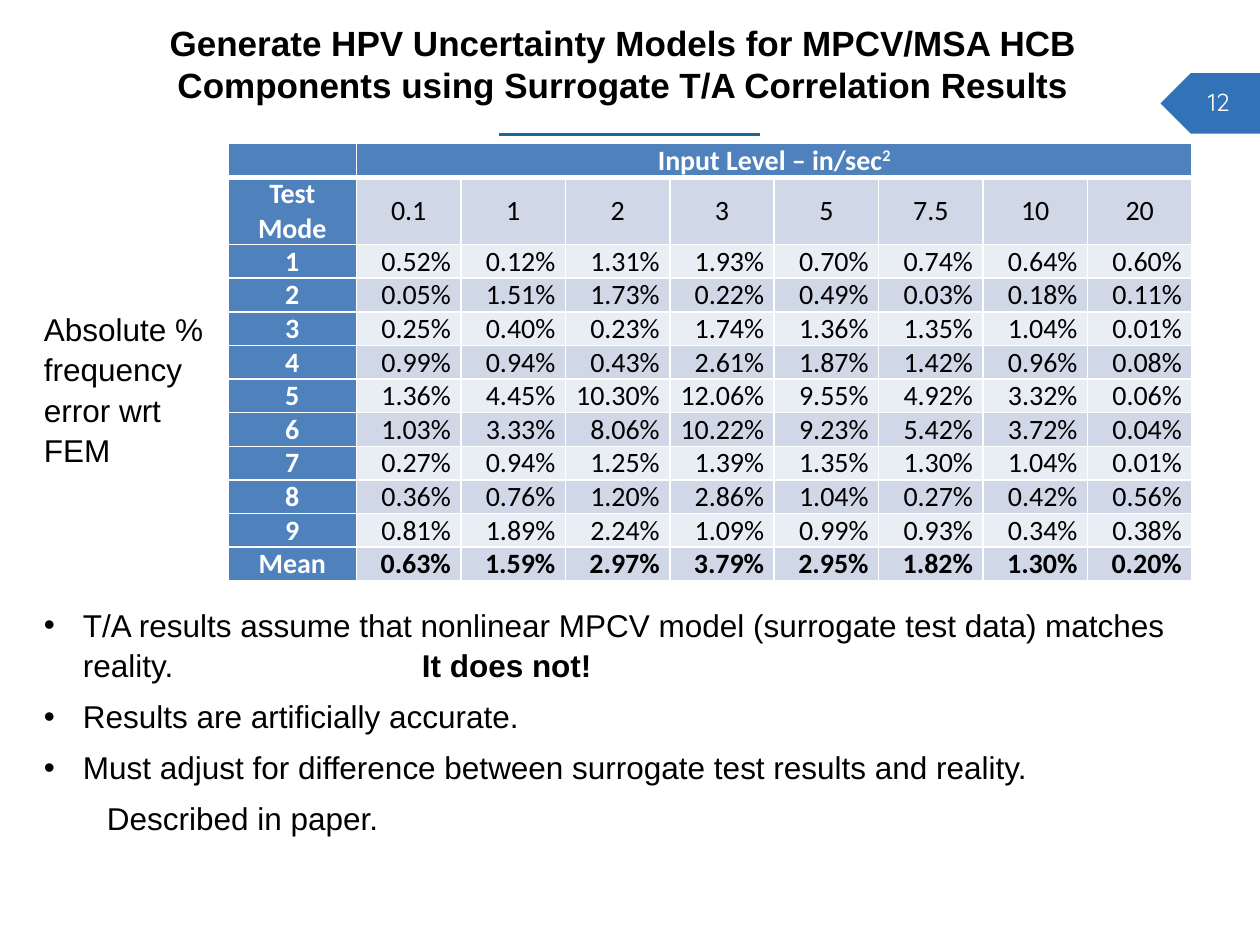
"""Build the slide on uncertainty models from surrogate correlation results."""
from lxml.etree import SubElement
from pptx import Presentation
from pptx.dml.color import RGBColor
from pptx.enum.shapes import MSO_CONNECTOR, MSO_SHAPE
from pptx.enum.text import MSO_ANCHOR, PP_ALIGN
from pptx.oxml.ns import qn
from pptx.util import Inches, Pt

BLACK = RGBColor(0x00, 0x00, 0x00)
WHITE = RGBColor(0xFF, 0xFF, 0xFF)
TAG_BLUE = RGBColor(0x31, 0x73, 0xB6)
RULE_BLUE = RGBColor(0x1A, 0x67, 0x98)
HEADER_BLUE = RGBColor(0x4F, 0x81, 0xBD)
BAND_DARK = RGBColor(0xD0, 0xD8, 0xE8)
BAND_LIGHT = RGBColor(0xE9, 0xED, 0xF4)

TITLE = ["Generate HPV Uncertainty Models for MPCV/MSA HCB",
         "Components using Surrogate T/A Correlation Results"]
PAGE_NUMBER = "12"
SIDE_LABEL = "Absolute % frequency error wrt FEM"
BULLETS = [
    ("T/A results assume that nonlinear MPCV model (surrogate test data) matches reality.\t",
     "It does not!"),
    ("Results are artificially accurate.",),
    ("Must adjust for difference between surrogate test results and reality.",),
]
CLOSING = "Described in paper."
HEADING, HEADING_POWER = "Input Level – in/sec", "2"
ROWS = [
    ("Test Mode", "0.1", "1", "2", "3", "5", "7.5", "10", "20"),
    ("1", "0.52%", "0.12%", "1.31%", "1.93%", "0.70%", "0.74%", "0.64%", "0.60%"),
    ("2", "0.05%", "1.51%", "1.73%", "0.22%", "0.49%", "0.03%", "0.18%", "0.11%"),
    ("3", "0.25%", "0.40%", "0.23%", "1.74%", "1.36%", "1.35%", "1.04%", "0.01%"),
    ("4", "0.99%", "0.94%", "0.43%", "2.61%", "1.87%", "1.42%", "0.96%", "0.08%"),
    ("5", "1.36%", "4.45%", "10.30%", "12.06%", "9.55%", "4.92%", "3.32%", "0.06%"),
    ("6", "1.03%", "3.33%", "8.06%", "10.22%", "9.23%", "5.42%", "3.72%", "0.04%"),
    ("7", "0.27%", "0.94%", "1.25%", "1.39%", "1.35%", "1.30%", "1.04%", "0.01%"),
    ("8", "0.36%", "0.76%", "1.20%", "2.86%", "1.04%", "0.27%", "0.42%", "0.56%"),
    ("9", "0.81%", "1.89%", "2.24%", "1.09%", "0.99%", "0.93%", "0.34%", "0.38%"),
    ("Mean", "0.63%", "1.59%", "2.97%", "3.79%", "2.95%", "1.82%", "1.30%", "0.20%"),
]
TABLE_LEFT, TABLE_TOP, TABLE_WIDTH, TABLE_HEIGHT = 1.81, 1.14, 7.65, 3.47
LABEL_WIDTH = 1.02


def set_font(paragraph, name, size, color, bold=False):
    font = paragraph.font
    font.name, font.size, font.bold = name, Pt(size), bold
    font.color.rgb = color


def add_text_box(slide, left, top, width, height):
    box = slide.shapes.add_textbox(Inches(left), Inches(top), Inches(width), Inches(height))
    box.text_frame.word_wrap = True
    return box.text_frame


def format_body(paragraph):
    paragraph.line_spacing = 1.07
    paragraph.space_after = Pt(6)
    set_font(paragraph, "Arial", 18, BLACK)


def set_indent(paragraph, left, first):
    properties = paragraph._p.get_or_add_pPr()
    properties.set("marL", str(Inches(left)))
    properties.set("indent", str(Inches(first)))
    return properties


def add_title(slide):
    title = slide.shapes.title
    title.left, title.top = Inches(0), Inches(0.12)
    title.width, title.height = Inches(9.89), Inches(0.77)
    frame = title.text_frame
    frame.vertical_anchor = MSO_ANCHOR.TOP
    frame.text = "\n".join(TITLE)
    for paragraph in frame.paragraphs:
        paragraph.alignment = PP_ALIGN.CENTER
        set_font(paragraph, "Arial", 20, BLACK, True)


def add_page_tag(slide):
    tag = slide.shapes.add_shape(MSO_SHAPE.PENTAGON, Inches(9.21), Inches(0.58),
                                 Inches(0.79), Inches(0.48))
    tag.rotation = 180
    tag.shadow.inherit = False
    tag.fill.solid()
    tag.fill.fore_color.rgb = TAG_BLUE
    tag.line.fill.background()
    frame = add_text_box(slide, 9.32, 0.61, 0.54, 0.4)
    frame.vertical_anchor = MSO_ANCHOR.MIDDLE
    paragraph = frame.paragraphs[0]
    paragraph.text = PAGE_NUMBER
    paragraph.alignment = PP_ALIGN.RIGHT
    set_font(paragraph, "Quicksand", 14, WHITE)


def add_title_rule(slide):
    rule = slide.shapes.add_connector(MSO_CONNECTOR.STRAIGHT, Inches(3.96), Inches(1.07),
                                      Inches(6.03), Inches(1.07))
    rule.line.color.rgb = RULE_BLUE
    rule.line.width = Pt(1.5)
    SubElement(rule._element.spPr, qn("a:effectLst"))


def format_cell(cell, fill, top_width, bottom_width):
    cell.margin_left = cell.margin_right = Inches(0.08)
    cell.margin_top = cell.margin_bottom = 0
    properties = cell._tc.get_or_add_tcPr()
    for side, width in zip("LRTB", (1, 1, top_width, bottom_width)):
        line = SubElement(properties, qn(f"a:ln{side}"), w=str(Pt(width)))
        color = SubElement(SubElement(line, qn("a:solidFill")), qn("a:srgbClr"))
        color.set("val", str(WHITE))
    cell.fill.solid()
    cell.fill.fore_color.rgb = fill


def add_error_table(slide):
    column_count = len(ROWS[0])
    table = slide.shapes.add_table(len(ROWS) + 1, column_count, Inches(TABLE_LEFT),
                                   Inches(TABLE_TOP), Inches(TABLE_WIDTH),
                                   Inches(TABLE_HEIGHT)).table
    value_width = (TABLE_WIDTH - LABEL_WIDTH) / (column_count - 1)
    for index, column in enumerate(table.columns):
        column.width = Inches(value_width if index else LABEL_WIDTH)
    line_height = TABLE_HEIGHT / (len(ROWS) + 2)
    for index, row in enumerate(table.rows):
        row.height = Inches(line_height * (2 if index == 1 else 1))

    for index in range(column_count):
        format_cell(table.cell(0, index), HEADER_BLUE, 1, 3)
    corner = table.cell(0, 0).text_frame.paragraphs[0]
    corner._p.get_or_add_endParaRPr().set("sz", "1600")
    heading_cell = table.cell(0, 1)
    heading_cell.merge(table.cell(0, column_count - 1))
    heading = heading_cell.text_frame.paragraphs[0]
    heading.add_run().text = HEADING
    power = heading.add_run()
    power.text = HEADING_POWER
    power.font._element.set("baseline", "30000")
    heading.alignment = PP_ALIGN.CENTER
    set_font(heading, "Calibri", 16, WHITE, True)

    for row_index, values in enumerate(ROWS, 1):
        is_levels, is_mean = row_index == 1, row_index == len(ROWS)
        band = BAND_DARK if row_index % 2 else BAND_LIGHT
        for column_index, value in enumerate(values):
            is_label = column_index == 0
            cell = table.cell(row_index, column_index)
            format_cell(cell, HEADER_BLUE if is_label else band, 3 if is_levels else 1, 1)
            if is_levels:
                cell.vertical_anchor = MSO_ANCHOR.MIDDLE
            paragraph = cell.text_frame.paragraphs[0]
            paragraph.text = value
            paragraph.alignment = PP_ALIGN.CENTER if is_label or is_levels else PP_ALIGN.RIGHT
            set_font(paragraph, "Calibri", 16, WHITE if is_label else BLACK, is_label or is_mean)


def add_bullets(slide):
    frame = add_text_box(slide, 0.25, 4.74, 9.48, 1.97)
    for index, (statement, *emphasis) in enumerate(BULLETS):
        paragraph = frame.add_paragraph() if index else frame.paragraphs[0]
        properties = set_indent(paragraph, 0.31, -0.31)
        SubElement(properties, qn("a:buFont"), typeface="Arial")
        SubElement(properties, qn("a:buChar"), char="•")
        if emphasis:
            tabs = SubElement(properties, qn("a:tabLst"))
            SubElement(tabs, qn("a:tab"), pos=str(Inches(3)), algn="l")
        paragraph.add_run().text = statement
        for words in emphasis:
            run = paragraph.add_run()
            run.text = words
            run.font.bold = True
        format_body(paragraph)
    closing = frame.add_paragraph()
    closing.text = CLOSING
    closing.level = 1
    set_indent(closing, 0.5, 0)
    format_body(closing)


def main():
    presentation = Presentation()
    presentation.slide_width, presentation.slide_height = Inches(10), Inches(7.5)
    slide = presentation.slides.add_slide(presentation.slide_layouts[5])
    add_page_tag(slide)
    add_title_rule(slide)
    add_title(slide)
    label = add_text_box(slide, 0.25, 2.39, 1.56, 1.4).paragraphs[0]
    label.text = SIDE_LABEL
    format_body(label)
    add_bullets(slide)
    add_error_table(slide)
    presentation.save("out.pptx")


if __name__ == "__main__":
    main()
